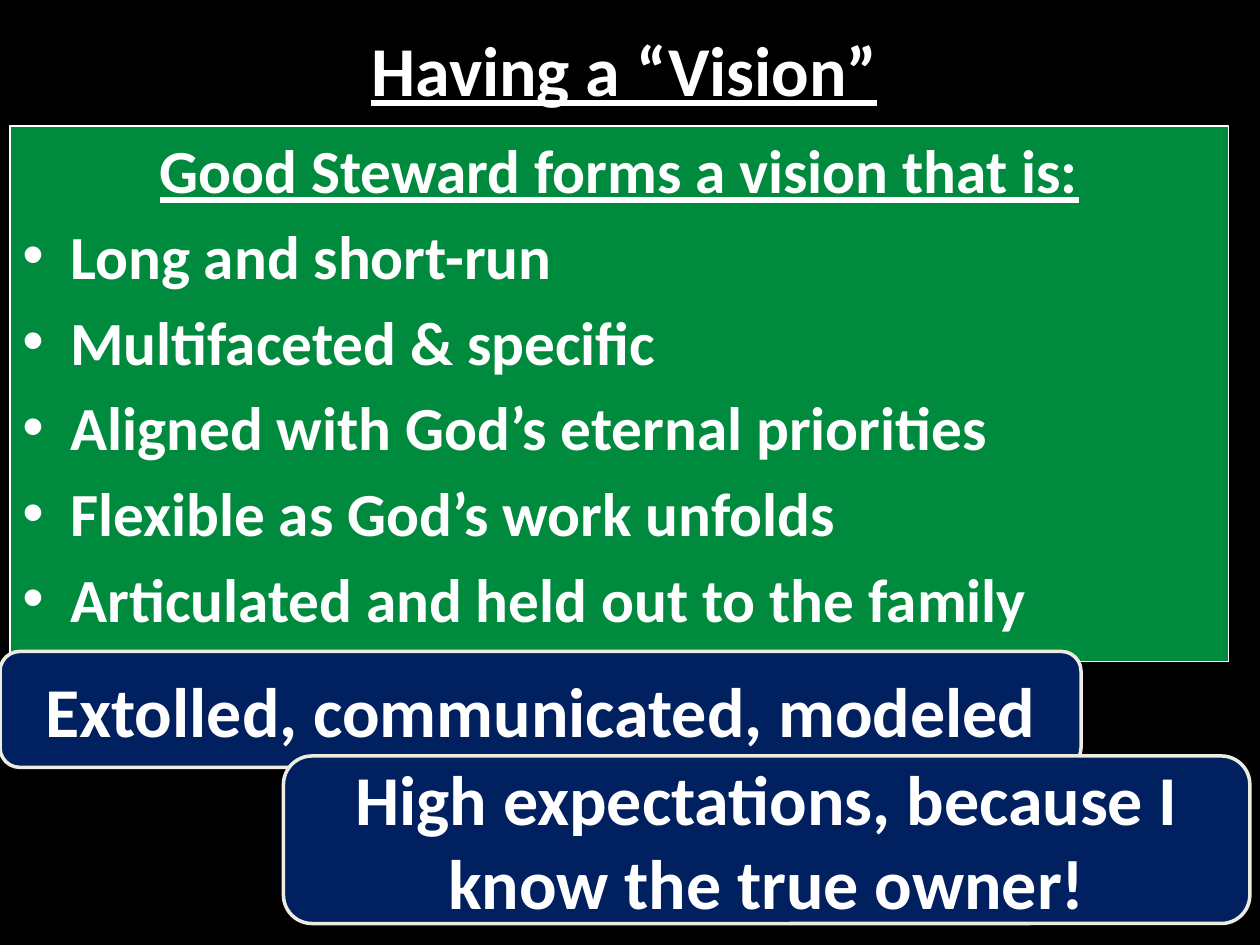
from lxml.etree import SubElement
from pptx import Presentation
from pptx.dml.color import RGBColor
from pptx.enum.shapes import MSO_SHAPE
from pptx.enum.text import MSO_ANCHOR, PP_ALIGN
from pptx.oxml.ns import qn
from pptx.util import Inches, Pt

HUES = {"back": "000000", "panel": "008A3E", "note": "002060",
        "edge": "EEECE1", "text": "FFFFFF"}


def hue(name):
    return RGBColor.from_string(HUES[name])


def write(par, text, align, size, line=False):
    par.alignment = align
    run = par.add_run()
    run.text = text
    look = {"name": "Calibri", "size": Pt(size), "bold": True, "underline": line}
    for key, value in look.items():
        setattr(run.font, key, value)
    run.font.color.rgb = hue("text")


deck = Presentation()
deck.slide_width, deck.slide_height = Inches(10), Inches(7.5)
slide = deck.slides.add_slide(deck.slide_layouts[6])
slide.background.fill.solid()
slide.background.fill.fore_color.rgb = hue("back")

# Green panel with heading and bullets
panel = slide.shapes.add_shape(MSO_SHAPE.RECTANGLE, Inches(0.08), Inches(1),
                               Inches(9.67), Inches(4.25))
panel.shadow.inherit = False
panel.fill.solid()
panel.fill.fore_color.rgb = hue("panel")
panel.line.color.rgb = hue("text")
panel.line.width = Pt(0.75)
frame = panel.text_frame
frame.word_wrap = True
frame.vertical_anchor = MSO_ANCHOR.TOP
lines = ["Good Steward forms a vision that is:",
         "Long and short-run",
         "Multifaceted & specific",
         "Aligned with God’s eternal priorities",
         "Flexible as God’s work unfolds",
         "Articulated and held out to the family"]
for i, text in enumerate(lines):
    head = i == 0
    par = frame.paragraphs[0] if head else frame.add_paragraph()
    write(par, text, PP_ALIGN.CENTER if head else PP_ALIGN.LEFT, 35, head)
    par.space_before = Pt(7)
    props = par._p.get_or_add_pPr()
    props.set("marL", str(Inches(0.38)))
    props.set("indent", str(Inches(-0.38)))
    if not head:
        SubElement(props, qn("a:buFont")).set("typeface", "Arial")
        SubElement(props, qn("a:buChar")).set("char", "•")

# Title and the two callouts, back to front
boxes = [
    ("Extolled, communicated, modeled", (0, 5.17, 8.58, 0.92), True),
    ("Having a “Vision”", (0.08, 0.08, 9.75, 0.92), False),
    ("High expectations, because I know the true owner!",
     (2.25, 6, 7.67, 1.33), True),
]
for text, place, note in boxes:
    place = [Inches(n) for n in place]
    if note:
        box = slide.shapes.add_shape(MSO_SHAPE.ROUNDED_RECTANGULAR_CALLOUT, *place)
        for i, value in enumerate((-0.22, 0.5, 0.17)):
            box.adjustments[i] = value
        box.shadow.inherit = False
        box.fill.solid()
        box.fill.fore_color.rgb = hue("note")
        box.line.color.rgb = hue("edge")
        box.line.width = Pt(2)
    else:
        box = slide.shapes.add_textbox(*place)
    box.text_frame.word_wrap = True
    box.text_frame.vertical_anchor = MSO_ANCHOR.MIDDLE
    write(box.text_frame.paragraphs[0], text, PP_ALIGN.CENTER, 40, not note)

deck.save("out.pptx")
